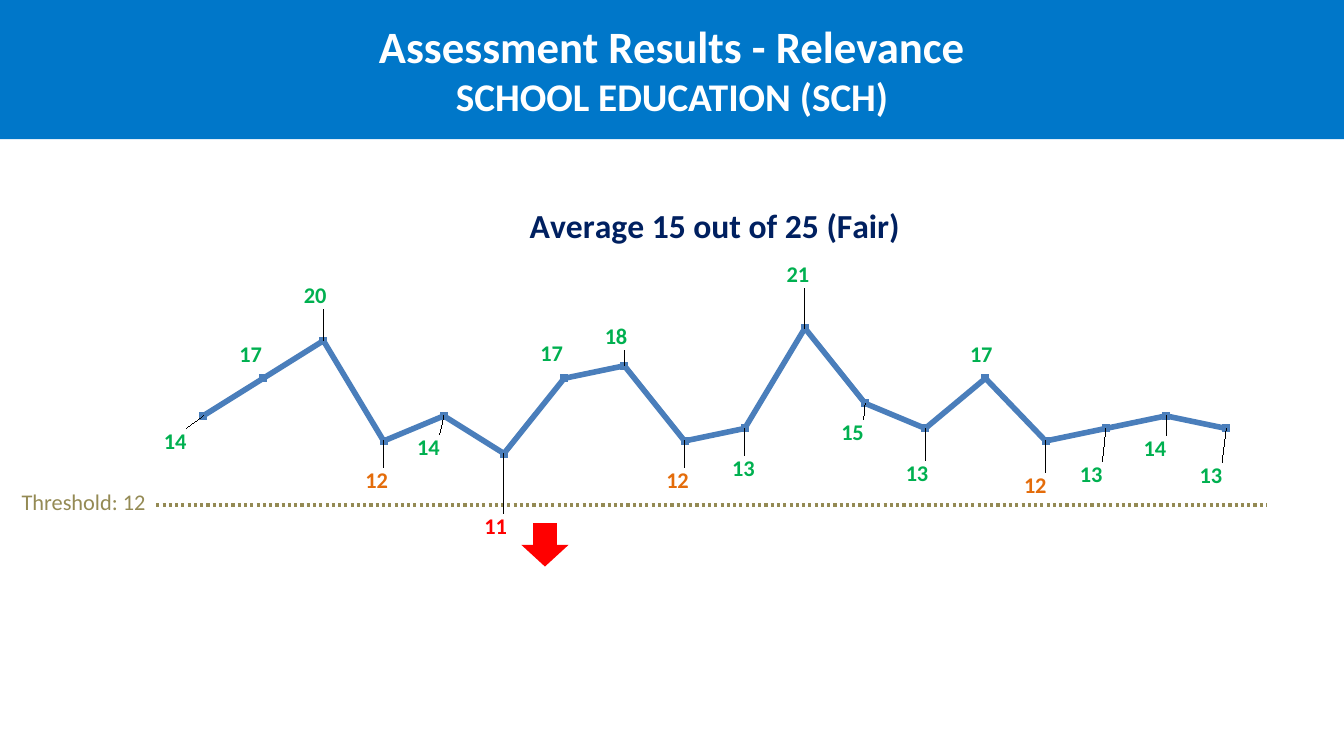
from dataclasses import dataclass

from lxml.etree import SubElement
from pptx import Presentation
from pptx.chart.data import CategoryChartData
from pptx.dml.color import RGBColor
from pptx.enum.chart import XL_CHART_TYPE, XL_LABEL_POSITION, XL_MARKER_STYLE, XL_TICK_LABEL_POSITION
from pptx.enum.dml import MSO_LINE
from pptx.enum.shapes import MSO_CONNECTOR, MSO_SHAPE
from pptx.enum.text import MSO_ANCHOR, PP_ALIGN
from pptx.oxml import parse_xml
from pptx.oxml.ns import nsdecls, qn
from pptx.util import Pt


@dataclass(frozen=True)
class Theme:
    font: str = "Calibri"
    banner: str = "0077C9"
    white: str = "FFFFFF"
    navy: str = "002060"
    threshold: str = "948A54"
    series: str = "4A7EBB"
    above: str = "00B050"
    level: str = "E46C0A"
    below: str = "FF0000"
    heading: int = 32
    subheading: int = 28
    chart_title: int = 24
    label: int = 16
    small: int = 10


THEME = Theme()
THRESHOLD = 12
SCORES = (14, 17, 20, 12, 14, 11, 17, 18, 12, 13, 21, 15, 13, 17, 12, 13, 14, 13)
# Distance of each label's centre from its point, in points
LABEL_SHIFTS = (
    (-20, 18.5), (-9, -16.5), (-6, -32), (-5, 29), (-11, 23), (-6, 52.5),
    (-9, -17.5), (-6, -20.5), (-5, 29), (-1, 29), (-5, -38), (-9, 21),
    (-6, 32.5), (-3, -16.5), (-7.5, 32), (-10.5, 33.5), (-8, 24), (-11, 34),
)
NO_LEADER_LINES = (
    f'<c:extLst {nsdecls("c")}><c:ext uri="{{CE6537A1-D6FC-4f65-9D91-7224C49458BB}}" '
    'xmlns:c15="http://schemas.microsoft.com/office/drawing/2012/chart">'
    '<c15:showLeaderLines val="0"/></c:ext></c:extLst>'
)


def apply(target, formats):
    for name, value in formats.items():
        setattr(target, name, value)


def style_font(font, size, color, bold=False):
    apply(font, {"name": THEME.font, "size": Pt(size), "bold": bold})
    font.color.rgb = RGBColor.from_string(color)


def paint(shape, color):
    shape.fill.solid()
    shape.fill.fore_color.rgb = RGBColor.from_string(color)
    shape.line.fill.background()
    shape.shadow.inherit = False


def add_layout(parent, index, settings):
    """Give a chart part a manual layout, as its child at the given index."""
    for old in parent.findall(qn("c:layout")):
        parent.remove(old)
    layout = parse_xml(f"<c:layout {nsdecls('c')}><c:manualLayout/></c:layout>")
    for name, value in settings.items():
        SubElement(layout[0], qn(f"c:{name}")).set("val", str(value))
    parent.insert(index, layout)


def add_banner(page, left, top, width, height):
    box = page.shapes.add_shape(MSO_SHAPE.RECTANGLE, Pt(left), Pt(top), Pt(width), Pt(height))
    paint(box, THEME.banner)
    apply(box.text_frame, {"vertical_anchor": MSO_ANCHOR.TOP, "margin_top": Pt(13.4), "word_wrap": True})
    para = box.text_frame.paragraphs[0]
    para.alignment = PP_ALIGN.CENTER
    span = para.add_run()
    span.text = "Assessment Results - Relevance"
    style_font(span.font, THEME.heading, THEME.white, True)
    para.add_line_break()
    span = para.add_run()
    span.text = "SCHOOL EDUCATION (SCH)"
    style_font(span.font, THEME.subheading, THEME.white, True)


def add_threshold(page, left, top, width, height):
    """Draw the caption at the left of the box and the dotted line to its right edge."""
    line_left, line_top = left + 111.6, top + 15.5
    line = page.shapes.add_connector(
        MSO_CONNECTOR.STRAIGHT, Pt(line_left), Pt(line_top), Pt(left + width), Pt(line_top))
    line.line.color.rgb = RGBColor.from_string(THEME.threshold)
    apply(line.line, {"width": Pt(2.25), "dash_style": MSO_LINE.ROUND_DOT})
    SubElement(line.element.spPr, qn("a:effectLst"))

    box = page.shapes.add_textbox(Pt(left), Pt(top), Pt(119.5), Pt(height))
    box.text_frame.word_wrap = True
    para = box.text_frame.paragraphs[0]
    para.alignment = PP_ALIGN.CENTER
    span = para.add_run()
    span.text = f"Threshold: {THRESHOLD}"
    style_font(span.font, THEME.label, THEME.threshold)


def score_color(score):
    if score == THRESHOLD:
        return THEME.level
    return THEME.above if score > THRESHOLD else THEME.below


def label_points(series, width, height):
    for index, score in enumerate(SCORES):
        label = series.points[index].data_label
        style_font(label.font, THEME.label, score_color(score), True)
        label.position = XL_LABEL_POSITION.CENTER
    labels = series._element.find(qn("c:dLbls"))
    for element, (right, down) in zip(labels.findall(qn("c:dLbl")), LABEL_SHIFTS):
        add_layout(element, 1, {"x": round(right / width, 4), "y": round(down / height, 4)})
    for leader in labels.findall(qn("c:showLeaderLines")):
        labels.remove(leader)
    labels.append(parse_xml(NO_LEADER_LINES))


def add_score_chart(page, left, top, width, height):
    data = CategoryChartData()
    data.categories = [str(number + 1) for number in range(len(SCORES))]
    data.add_series("Series 1", SCORES)
    chart = page.shapes.add_chart(
        XL_CHART_TYPE.LINE_MARKERS, Pt(left), Pt(top), Pt(width), Pt(height), data).chart
    apply(chart, {"has_legend": False, "has_title": True})
    style_font(chart.font, THEME.small, "000000")

    title = chart.chart_title
    title.text_frame.text = "Average 15 out of 25 (Fair)"
    style_font(title.text_frame.paragraphs[0].runs[0].font, THEME.chart_title, THEME.navy, True)
    edges = {"xMode": "edge", "yMode": "edge"}
    add_layout(title._element, 1, {**edges, "x": 0.329, "y": 0.031})
    add_layout(chart._chartSpace.chart.plotArea, 0, {
        "layoutTarget": "inner", **edges, "x": 0.015, "y": 0.221, "w": 0.97, "h": 0.739})

    apply(chart.value_axis, {"visible": False, "has_major_gridlines": False,
                             "minimum_scale": 0, "maximum_scale": 25})
    chart.category_axis.tick_label_position = XL_TICK_LABEL_POSITION.NONE
    chart.category_axis.format.line.fill.background()

    chart.plots[0].vary_by_categories = False
    series = chart.plots[0].series[0]
    series.smooth = False
    color = RGBColor.from_string(THEME.series)
    series.format.line.color.rgb = color
    series.format.line.width = Pt(4)
    apply(series.marker, {"style": XL_MARKER_STYLE.SQUARE, "size": 5})
    series.marker.format.fill.solid()
    series.marker.format.fill.fore_color.rgb = color
    series.marker.format.line.color.rgb = color
    label_points(series, width, height)


def add_warning_arrow(page, left, top, width, height):
    arrow = page.shapes.add_shape(MSO_SHAPE.DOWN_ARROW, Pt(left), Pt(top), Pt(width), Pt(height))
    paint(arrow, THEME.below)


def main():
    deck = Presentation()
    apply(deck, {"slide_width": Pt(960), "slide_height": Pt(540)})
    page = deck.slides.add_slide(deck.slide_layouts[6])
    add_banner(page, 0, 0, 960, 99.4)
    add_threshold(page, 0, 345.2, 905, 26.6)
    add_score_chart(page, 111.6, 131.6, 797.8, 303.1)
    add_warning_arrow(page, 372.4, 373.7, 33.8, 31)
    deck.save("out.pptx")


if __name__ == "__main__":
    main()
